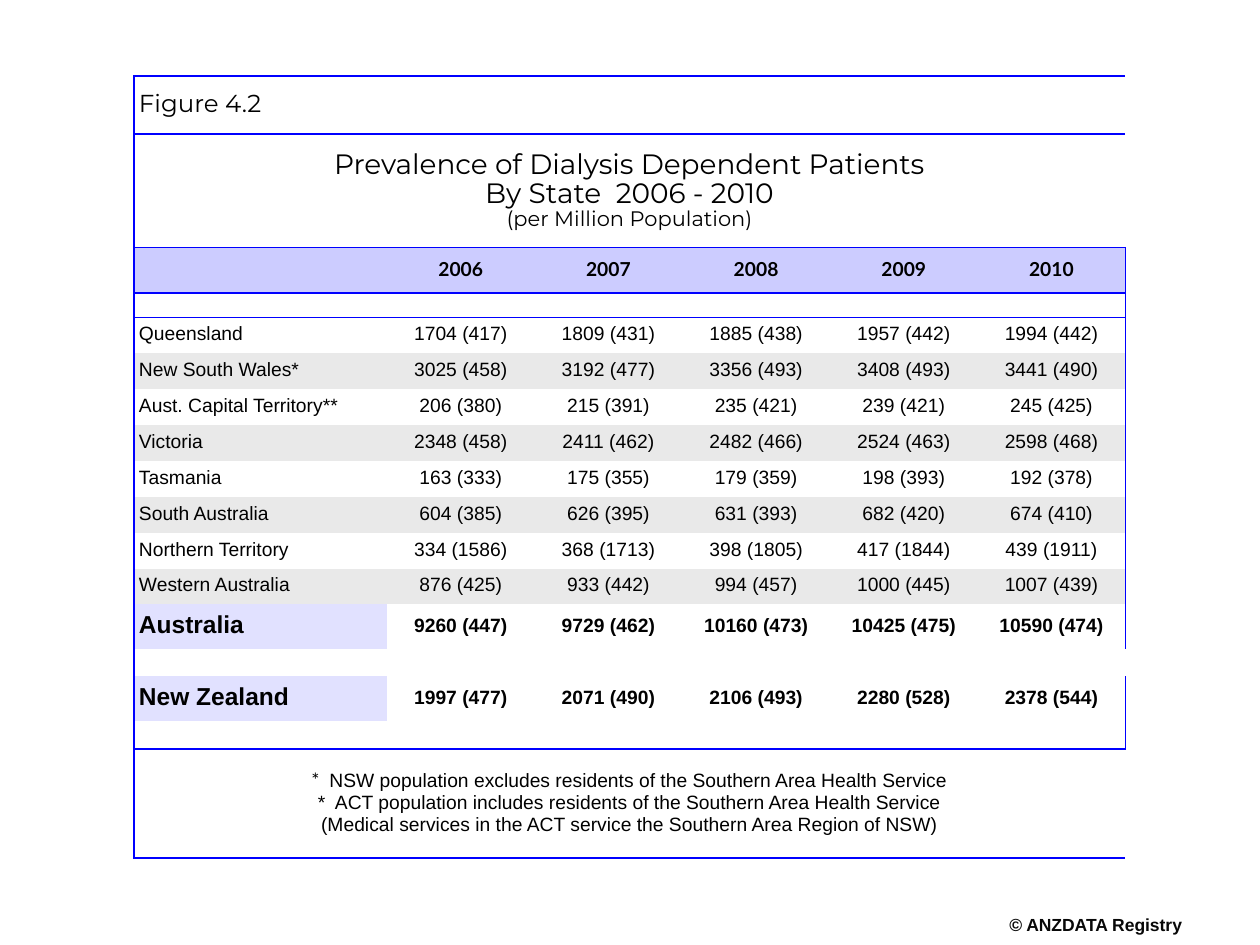
from dataclasses import dataclass
from typing import Optional

from lxml import etree
from pptx import Presentation
from pptx.dml.color import RGBColor
from pptx.enum import text
from pptx.oxml import ns
from pptx.util import Pt

LEFT, CENTER = text.PP_ALIGN.LEFT, text.PP_ALIGN.CENTER


@dataclass(frozen=True)
class Theme:
    rule: str = "0000FF"
    ink: str = "000000"
    credit: str = "080808"
    header: str = "CCCCFF"
    band: str = "E9E9E9"
    total: str = "E1E1FF"
    body: str = "Arial"
    heading: str = "Montserrat"
    accent: str = "Lato"
    title_size: float = 16
    label_size: float = 14
    subtitle_size: float = 12
    cell_size: float = 11
    credit_size: float = 10
    spacer_size: float = 6
    leading: float = 0.85
    rule_width: float = 1


@dataclass(frozen=True)
class Run:
    text: str
    size: float
    font: str
    bold: bool = False
    color: str = "000000"


@dataclass(frozen=True)
class Region:
    name: str
    values: tuple[str, ...]


T = Theme()
YEARS = ("2006", "2007", "2008", "2009", "2010")
STATES = (
    Region("Queensland", ("1704 (417)", "1809 (431)", "1885 (438)", "1957 (442)", "1994 (442)")),
    Region("New South Wales*", ("3025 (458)", "3192 (477)", "3356 (493)", "3408 (493)", "3441 (490)")),
    Region("Aust. Capital Territory**", ("206 (380)", "215 (391)", "235 (421)", "239 (421)", "245 (425)")),
    Region("Victoria", ("2348 (458)", "2411 (462)", "2482 (466)", "2524 (463)", "2598 (468)")),
    Region("Tasmania", ("163 (333)", "175 (355)", "179 (359)", "198 (393)", "192 (378)")),
    Region("South Australia", ("604 (385)", "626 (395)", "631 (393)", "682 (420)", "674 (410)")),
    Region("Northern Territory", ("334 (1586)", "368 (1713)", "398 (1805)", "417 (1844)", "439 (1911)")),
    Region("Western Australia", ("876 (425)", "933 (442)", "994 (457)", "1000 (445)", "1007 (439)")),
)
AUSTRALIA = Region("Australia", ("9260 (447)", "9729 (462)", "10160 (473)", "10425 (475)", "10590 (474)"))
NEW_ZEALAND = Region("New Zealand", ("1997 (477)", "2071 (490)", "2106 (493)", "2280 (528)", "2378 (544)"))

COLUMNS = [144.6] + [84.4] * len(YEARS)
ROWS = [33.1, 65.1, 25.9, 14] + [20.5] * len(STATES) + [25.7, 15.4, 25.7, 16, 62.2]
FIGURE, TITLE, HEADER, FIRST_STATE = 0, 1, 2, 4
TOTAL, GAP, NZ, END, NOTES = range(FIRST_STATE + len(STATES), len(ROWS))
RULED_BELOW = {FIGURE, TITLE, HEADER, END, NOTES}
NO_STYLE = "{2D5ABB26-0587-4C30-8999-92F81FD0307C}"


def add_runs(p, runs: list[Run], align=LEFT) -> None:
    p.alignment = align
    p.line_spacing = T.leading
    for run in runs:
        r = p.add_run()
        r.text = run.text
        r.font.size = Pt(run.size)
        r.font.name = run.font
        r.font.bold = run.bold
        r.font.color.rgb = RGBColor.from_string(run.color)


def write(cell, lines: list[list[Run]], align=CENTER, gap: float = 0) -> None:
    tf = cell.text_frame
    for i, runs in enumerate(lines):
        p = tf.add_paragraph() if i else tf.paragraphs[0]
        add_runs(p, runs, align)
        if gap:
            p.space_after = Pt(gap)
            if i:
                p.space_before = Pt(gap)


def add_border(cell, side: str) -> None:
    tag = ns.qn(f"a:ln{side}")
    ln = etree.SubElement(cell._tc.get_or_add_tcPr(), tag, w=str(Pt(T.rule_width)))
    fill = etree.SubElement(ln, ns.qn("a:solidFill"))
    etree.SubElement(fill, ns.qn("a:srgbClr"), val=T.rule)


def fill_for(row: int, col: int) -> Optional[str]:
    if row == HEADER:
        return T.header
    if FIRST_STATE <= row < TOTAL and (row - FIRST_STATE) % 2:
        return T.band
    if row in (TOTAL, NZ) and col == 0:
        return T.total
    return None


def style_cell(cell, row: int, col: int) -> None:
    cell.margin_left = cell.margin_right = Pt(2.9)
    cell.margin_top = cell.margin_bottom = Pt(1.4)
    cell.vertical_anchor = text.MSO_ANCHOR.MIDDLE
    sides = {
        "L": col == 0,
        "R": col == len(COLUMNS) - 1,
        "T": row == 0 or row - 1 in RULED_BELOW,
        "B": row in RULED_BELOW,
    }
    for side, ruled in sides.items():
        if ruled:
            add_border(cell, side)
    color = fill_for(row, col)
    if color:
        cell.fill.solid()
        cell.fill.fore_color.rgb = RGBColor.from_string(color)
    else:
        cell.fill.background()


def write_region(table, row: int, region: Region, label_size: float, bold: bool) -> None:
    write(table.cell(row, 0), [[Run(region.name, label_size, T.body, bold)]], LEFT)
    for col, value in enumerate(region.values, 1):
        write(table.cell(row, col), [[Run(value, T.cell_size, T.body, bold)]])


def add_prevalence_table(s) -> None:
    frame = s.shapes.add_table(len(ROWS), len(COLUMNS), Pt(76.5), Pt(43.4),
                               Pt(sum(COLUMNS)), Pt(sum(ROWS)))
    table = frame.table
    table.first_row = table.horz_banding = False
    table._tbl.tblPr.find(ns.qn("a:tableStyleId")).text = NO_STYLE
    for column, width in zip(table.columns, COLUMNS):
        column.width = Pt(width)
    for row, height in enumerate(ROWS):
        table.rows[row].height = Pt(height)
        for col in range(len(COLUMNS)):
            style_cell(table.cell(row, col), row, col)
    for row in (FIGURE, TITLE, GAP, NOTES):
        table.cell(row, 0).merge(table.cell(row, len(COLUMNS) - 1))

    write(table.cell(FIGURE, 0), [[Run("Figure 4.2", T.label_size, T.heading)]], LEFT)
    write(table.cell(TITLE, 0), [
        [Run("Prevalence of Dialysis Dependent Patients", T.title_size, T.heading)],
        [Run("By State  2006 - 2010", T.title_size, T.heading)],
        [Run("(per Million Population)", T.subtitle_size, T.heading)],
    ])
    for col, year in enumerate(YEARS, 1):
        write(table.cell(HEADER, col), [[Run(year, T.cell_size, T.accent, True)]])
    for row, state in enumerate(STATES, FIRST_STATE):
        write_region(table, row, state, T.cell_size, False)
    write_region(table, TOTAL, AUSTRALIA, T.label_size, True)
    write_region(table, NZ, NEW_ZEALAND, T.label_size, True)
    write(table.cell(NOTES, 0), [
        [Run("*  ", T.cell_size, T.accent),
         Run("NSW population excludes residents of the Southern Area Health Service", T.cell_size, T.body)],
        [Run("*  ACT population includes residents of the Southern Area Health Service", T.cell_size, T.body)],
        [Run("(Medical services in the ACT service the Southern Area Region of NSW)", T.cell_size, T.body)],
    ], gap=1)

    for cell in table.iter_cells():
        p = cell.text_frame.paragraphs[0]
        if not p.runs:
            etree.SubElement(p._p, ns.qn("a:endParaRPr"), sz=str(int(T.spacer_size * 100)))


def add_credit(s) -> None:
    sp = s.shapes.add_textbox(Pt(575.3), Pt(524.2), Pt(101.5), Pt(12.2))
    tf = sp.text_frame
    tf.margin_left = tf.margin_right = tf.margin_top = tf.margin_bottom = 0
    tf.word_wrap = False
    tf.auto_size = text.MSO_AUTO_SIZE.SHAPE_TO_FIT_TEXT
    add_runs(tf.paragraphs[0],
             [Run("© ANZDATA Registry", T.credit_size, T.body, True, T.credit)], CENTER)


def main() -> None:
    prs = Presentation()
    prs.slide_width, prs.slide_height = Pt(720), Pt(540)
    s = prs.slides.add_slide(prs.slide_layouts[6])
    add_credit(s)
    add_prevalence_table(s)
    prs.save("out.pptx")


if __name__ == "__main__":
    main()
